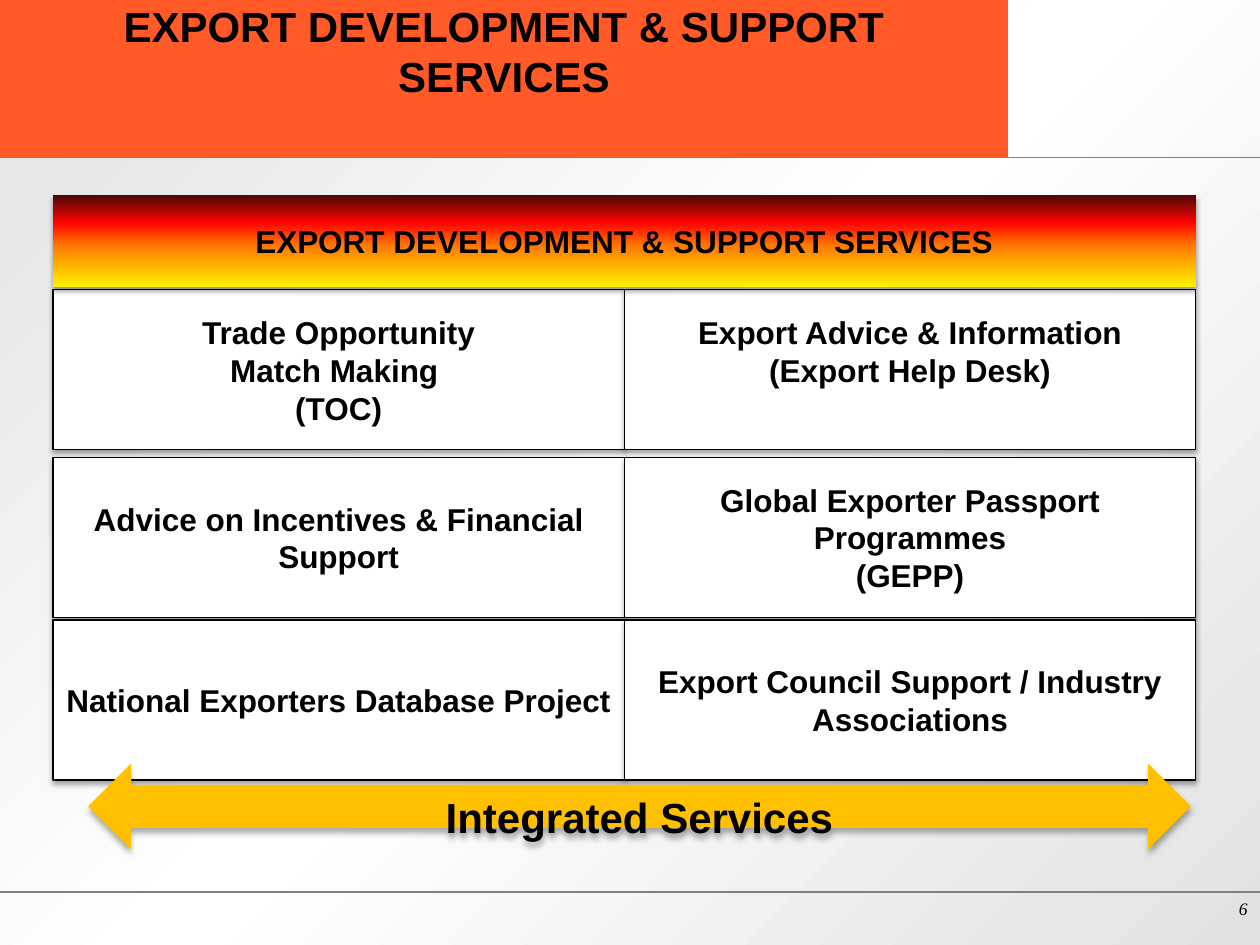
from lxml.etree import SubElement
from pptx import Presentation
from pptx.dml.color import RGBColor
from pptx.enum.shapes import MSO_CONNECTOR, MSO_SHAPE
from pptx.enum.text import MSO_ANCHOR, PP_ALIGN
from pptx.oxml.ns import qn
from pptx.util import Inches, Pt

COLORS = {
    "black": "000000", "white": "FFFFFF", "rule": "808080",
    "title": "FF5A27", "arrow": "FFC000", "silver": "E2E2E2",
    "yellow": "FFF200", "orange": "FF7A00", "red": "FF0300", "maroon": "4D0808",
}
BACKGROUND_STOPS = [(0, "silver"), (50, "white"), (100, "silver")]
HEADER_STOPS = [(0, "yellow"), (45, "orange"), (70, "red"), (100, "maroon")]
HEADING = "EXPORT DEVELOPMENT & SUPPORT SERVICES"
SERVICE_ROWS = [
    (2.3, ["Trade Opportunity", "Match Making ", "(TOC)"],
     ["Export Advice & Information", "(Export Help Desk)"]),
    (3.63, ["Advice on Incentives & Financial Support"],
     ["Global Exporter Passport Programmes", "(GEPP)"]),
    (4.92, ["National Exporters Database Project"],
     ["Export Council Support / Industry Associations"]),
]
LEFT, CELL_WIDTH, CELL_HEIGHT = 0.42, 4.535, 1.27


def color(name):
    """Return the named palette color."""
    return RGBColor.from_string(COLORS[name])


def set_gradient(fill, element, stops, angle):
    """Give a fill a clockwise linear gradient with any number of stops."""
    fill.gradient()
    fill.gradient_angle = 360 - angle
    stop_list = next(element.iter(qn("a:gsLst")))
    for stop in list(stop_list):
        stop_list.remove(stop)
    for position, name in stops:
        stop = SubElement(stop_list, qn("a:gs"), pos=str(position * 1000))
        SubElement(stop, qn("a:srgbClr"), val=COLORS[name])


def add_shadow(shape, blur, distance, opacity):
    """Cast a soft black shadow straight down."""
    effects = shape._element.spPr.find(qn("a:effectLst"))
    shadow = SubElement(effects, qn("a:outerShdw"), blurRad=str(Pt(blur)),
                        dist=str(Pt(distance)), dir="5400000", rotWithShape="0")
    black = SubElement(shadow, qn("a:srgbClr"), val=COLORS["black"])
    SubElement(black, qn("a:alpha"), val=str(opacity * 1000))


def write_text(shape, lines, size=18, font="Arial", bold=True, italic=False,
               align=PP_ALIGN.CENTER, anchor=MSO_ANCHOR.MIDDLE, top=0.05, bottom=0.05):
    """Write one paragraph per line in a single format."""
    frame = shape.text_frame
    frame.word_wrap = True
    frame.vertical_anchor = anchor
    frame.margin_top, frame.margin_bottom = Inches(top), Inches(bottom)
    frame.text = "\n".join(lines)
    for paragraph in frame.paragraphs:
        paragraph.alignment = align
        paragraph.font.size = Pt(size)
        paragraph.font.name = font
        paragraph.font.bold = bold
        paragraph.font.italic = italic
        paragraph.font.color.rgb = color("black")


def add_block(slide, box, fill=None, line=None, kind=MSO_SHAPE.RECTANGLE):
    """Add a preset shape with an optional solid fill and outline."""
    shape = slide.shapes.add_shape(kind, *map(Inches, box))
    shape.shadow.inherit = False
    if fill:
        shape.fill.solid()
        shape.fill.fore_color.rgb = color(fill)
    if line:
        shape.line.color.rgb = color(line)
        shape.line.width = Pt(0.75)
    else:
        shape.line.fill.background()
    return shape


def add_rule(slide, y):
    """Draw a thin rule across the slide."""
    rule = slide.shapes.add_connector(
        MSO_CONNECTOR.STRAIGHT, 0, Inches(y), Inches(10), Inches(y))
    rule.line.color.rgb = color("rule")
    rule.line.width = Pt(0.75)
    SubElement(rule._element.spPr, qn("a:effectLst"))


def add_services(slide):
    """Add the grid of services and the gradient header above it."""
    for y, *cells in SERVICE_ROWS:
        for column, lines in enumerate(cells):
            box = (LEFT + column * CELL_WIDTH, y, CELL_WIDTH, CELL_HEIGHT)
            cell = add_block(slide, box, "white", "black")
            add_shadow(cell, 3.1, 1.8, 35)
            write_text(cell, lines, bottom=0.35 if "(Export Help Desk)" in lines else 0.05)
    header = add_block(slide, (LEFT, 1.55, 2 * CELL_WIDTH, 0.73))
    set_gradient(header.fill, header._element, HEADER_STOPS, 270)
    add_shadow(header, 3.1, 1.8, 35)
    write_text(header, [HEADING])


def main():
    """Build and save the slide."""
    presentation = Presentation()
    presentation.slide_width, presentation.slide_height = Inches(10), Inches(7.5)
    slide = presentation.slides.add_slide(presentation.slide_layouts[6])
    set_gradient(slide.background.fill, slide.element, BACKGROUND_STOPS, 45)
    for y in (1.25, 7.08):
        add_rule(slide, y)

    title = add_block(slide, (0, 0, 8, 1.25), "title")
    write_text(title, [HEADING], size=24, anchor=MSO_ANCHOR.TOP, top=0)
    number = slide.shapes.add_textbox(*map(Inches, (7.92, 7.08, 2.08, 0.42)))
    write_text(number, ["6"], size=10, font="Times New Roman", bold=False,
               italic=True, align=PP_ALIGN.RIGHT, anchor=MSO_ANCHOR.TOP)

    add_services(slide)
    arrow = add_block(slide, (0.7, 6.06, 8.75, 0.68), "arrow",
                      kind=MSO_SHAPE.LEFT_RIGHT_ARROW)
    add_shadow(arrow, 3.5, 2.2, 32)
    write_text(arrow, ["Integrated Services"], size=24, anchor=MSO_ANCHOR.TOP)
    presentation.save("out.pptx")


if __name__ == "__main__":
    main()
